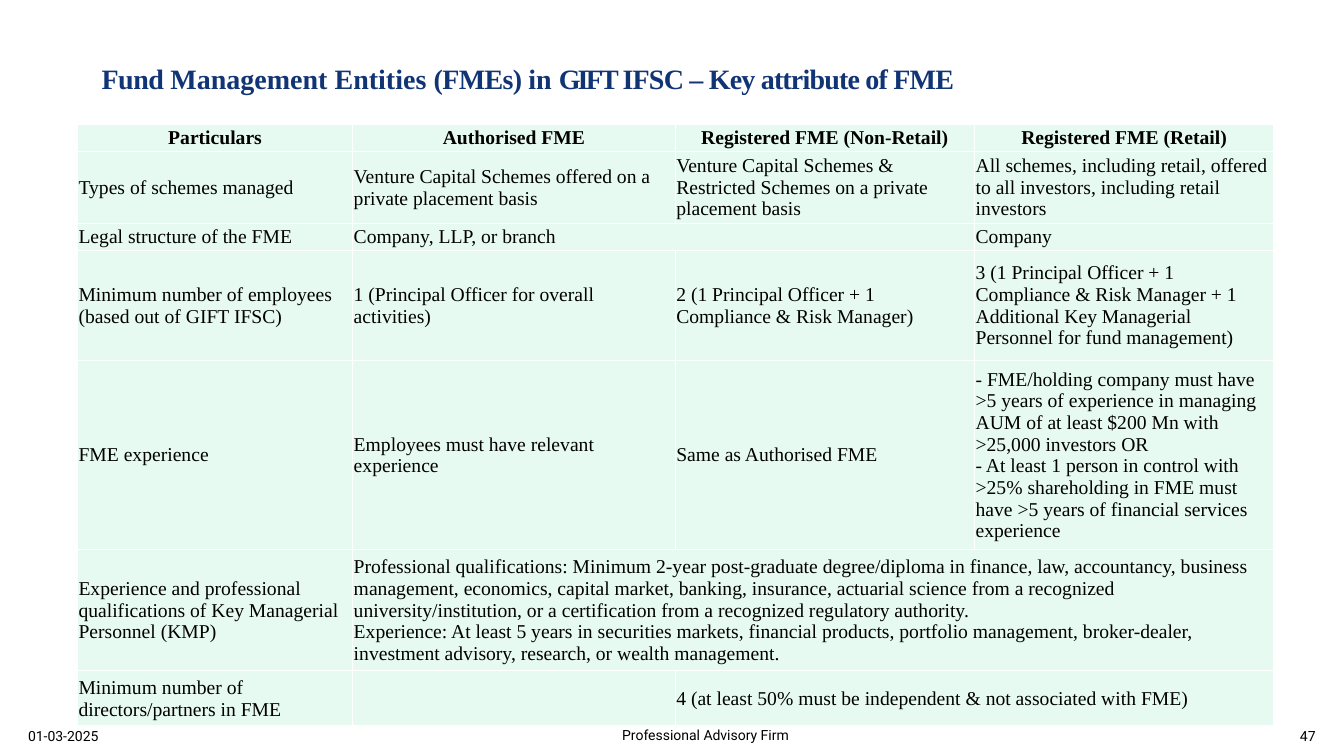
import dataclasses

import lxml.etree
import pptx
import pptx.dml.color
import pptx.enum.text
import pptx.oxml.ns
import pptx.util

Pt = pptx.util.Pt
ALIGN = pptx.enum.text.PP_ALIGN
ANCHOR = pptx.enum.text.MSO_ANCHOR


@dataclasses.dataclass(frozen=True)
class Theme:
    navy: str = "113475"
    ink: str = "000000"
    mint: str = "E7FAF1"
    rule: str = "FFFFFF"
    serif: str = "Times New Roman"
    sans: str = "Roboto"
    title_size: int = 20
    cell_size: int = 14
    footer_size: int = 10


def rgb(value):
    return pptx.dml.color.RGBColor.from_string(value)


def write(para, text, *, font, size, color, bold=False, align=ALIGN.LEFT, spacing=0):
    para.alignment = align
    span = para.add_run()
    span.text = text
    span.font.name = font
    span.font.size = Pt(size)
    span.font.color.rgb = rgb(color)
    span.font.bold = bold
    if spacing:
        span._r.get_or_add_rPr().set("spc", str(round(spacing * 100)))


class SlideBuilder:
    def __init__(self, page, theme):
        self.page = page
        self.theme = theme

    def text_box(self, left, top, width, height, anchor):
        box = self.page.shapes.add_textbox(Pt(left), Pt(top), Pt(width), Pt(height))
        box.text_frame.word_wrap = True
        box.text_frame.vertical_anchor = anchor
        return box.text_frame.paragraphs[0]

    def title(self, pieces, left, top, width, height):
        para = self.text_box(left, top, width, height, ANCHOR.TOP)
        for text, spacing in pieces:
            write(para, text, font=self.theme.serif, size=self.theme.title_size,
                  color=self.theme.navy, bold=True, spacing=spacing)

    def footer(self, text, left, top, width, align):
        para = self.text_box(left, top, width, 36, ANCHOR.BOTTOM)
        write(para, text, font=self.theme.sans, size=self.theme.footer_size,
              color=self.theme.ink, align=align)

    def border(self, cell):
        properties = cell._tc.get_or_add_tcPr()
        qn = pptx.oxml.ns.qn
        for side in ("lnL", "lnR", "lnT", "lnB"):
            line = lxml.etree.SubElement(properties, qn(f"a:{side}"), w=str(Pt(1)))
            fill = lxml.etree.SubElement(line, qn("a:solidFill"))
            lxml.etree.SubElement(fill, qn("a:srgbClr"), val=self.theme.rule)

    def cell(self, cell, text, header):
        self.border(cell)
        cell.fill.solid()
        cell.fill.fore_color.rgb = rgb(self.theme.mint)
        cell.vertical_anchor = ANCHOR.MIDDLE
        cell.margin_left = cell.margin_right = cell.margin_top = Pt(0.72)
        cell.margin_bottom = Pt(0)
        for index, line in enumerate(text.split("\n") if text else []):
            frame = cell.text_frame
            para = frame.add_paragraph() if index else frame.paragraphs[0]
            write(para, line, font=self.theme.serif, size=self.theme.cell_size,
                  color=self.theme.ink, bold=header,
                  align=ALIGN.CENTER if header else ALIGN.LEFT)

    def table(self, rows, left, top, widths, heights, merges):
        table = self.page.shapes.add_table(
            len(heights), len(widths), Pt(left), Pt(top),
            Pt(sum(widths)), Pt(sum(heights))).table
        table.first_row = table.horz_banding = False
        for column, width in zip(table.columns, widths):
            column.width = Pt(width)
        for row, height in zip(table.rows, heights):
            row.height = Pt(height)
        for row, first, last in merges:
            table.cell(row, first).merge(table.cell(row, last))
        for row, texts in enumerate(rows):
            for column, text in enumerate(texts):
                self.cell(table.cell(row, column), text, header=row == 0)


TITLE = [
    ("Fund ", -0.4),
    ("Management Entities ", 0),
    ("(FMEs) ", -0.5),
    ("in ", 0),
    ("GIFT ", -2),
    ("IFSC – Key attribute of FME", -0.6),
]

ROWS = [
    ["Particulars", "Authorised FME", "Registered FME (Non-Retail)",
     "Registered FME (Retail)"],
    ["Types of schemes managed",
     "Venture Capital Schemes offered on a private placement basis",
     "Venture Capital Schemes & Restricted Schemes on a private placement basis",
     "All schemes, including retail, offered to all investors, including retail investors"],
    ["Legal structure of the FME", "Company, LLP, or branch", "", "Company"],
    ["Minimum number of employees (based out of GIFT IFSC)",
     "1 (Principal Officer for overall activities)",
     "2 (1 Principal Officer + 1 Compliance & Risk Manager)",
     "3 (1 Principal Officer + 1 Compliance & Risk Manager + 1 Additional Key "
     "Managerial Personnel for fund management)"],
    ["FME experience", "Employees must have relevant experience",
     "Same as Authorised FME",
     "- FME/holding company must have >5 years of experience in managing AUM of "
     "at least $200 Mn with >25,000 investors OR\n"
     "- At least 1 person in control with >25% shareholding in FME must have "
     ">5 years of financial services experience"],
    ["Experience and professional qualifications of Key Managerial Personnel (KMP)",
     "Professional qualifications: Minimum 2-year post-graduate degree/diploma in "
     "finance, law, accountancy, business management, economics, capital market, "
     "banking, insurance, actuarial science from a recognized "
     "university/institution, or a certification from a recognized regulatory "
     "authority.\n"
     "Experience: At least 5 years in securities markets, financial products, "
     "portfolio management, broker-dealer, investment advisory, research, or "
     "wealth management.", "", ""],
    ["Minimum number of directors/partners in FME", "",
     "4 (at least 50% must be independent & not associated with FME)", ""],
]


def main():
    deck = pptx.Presentation()
    deck.slide_width, deck.slide_height = Pt(960), Pt(540)
    builder = SlideBuilder(deck.slides.add_slide(deck.slide_layouts[6]), Theme())
    builder.title(TITLE, 65.5, 40.3, 854.6, 31.7)
    builder.table(ROWS, 55.4, 88.6,
                  widths=[196.6, 230.4, 213.8, 213.8],
                  heights=[19.4, 51.4, 19.4, 78.5, 135, 86.4, 39.5],
                  merges=[(2, 1, 2), (5, 1, 3), (6, 2, 3)])
    builder.footer("01-03-2025", 13, 499, 69.8, ALIGN.LEFT)
    builder.footer("Professional Advisory Firm", 352, 498.2, 303.8, ALIGN.CENTER)
    builder.footer("47", 912.2, 499, 34.6, ALIGN.RIGHT)
    deck.save("out.pptx")


if __name__ == "__main__":
    main()
